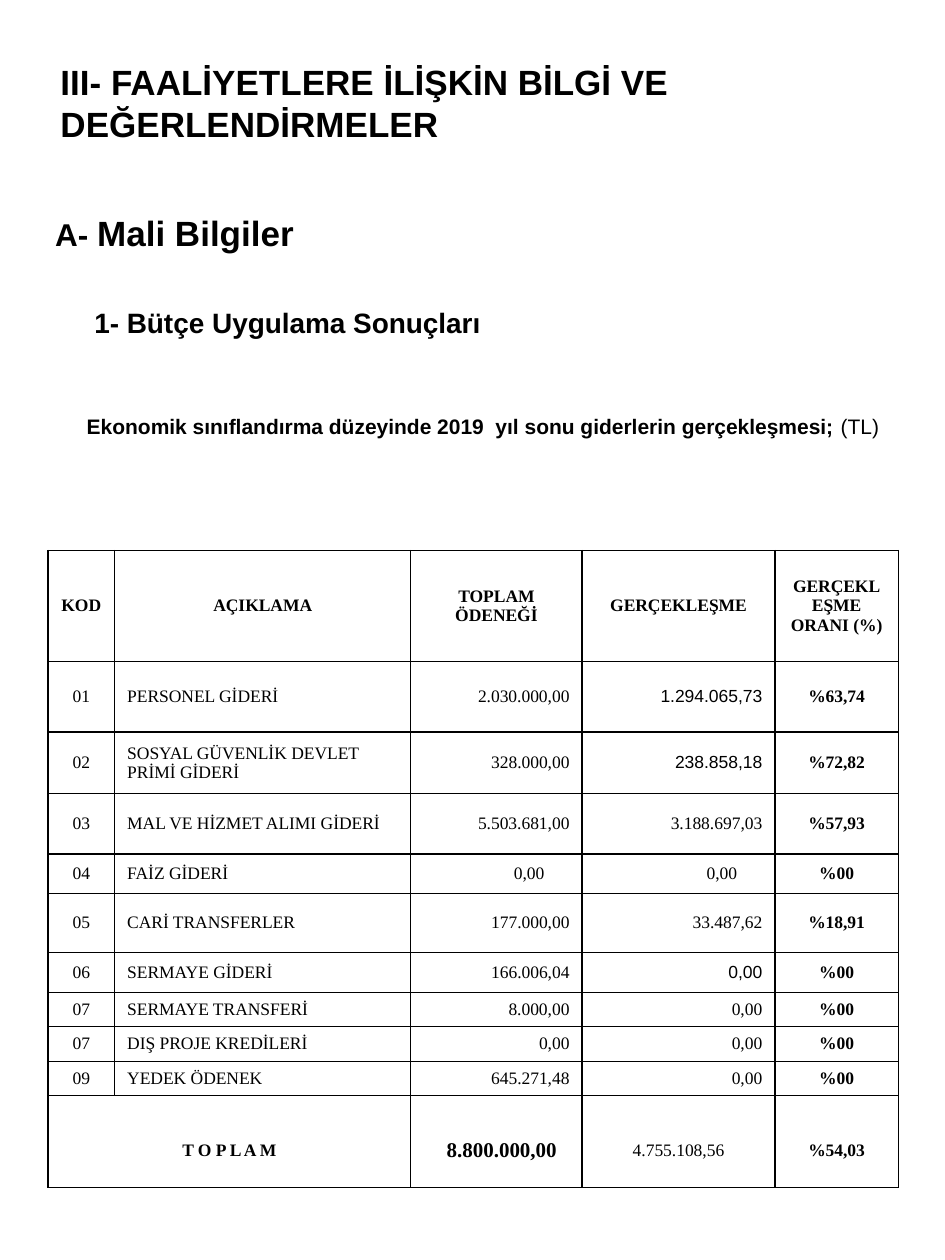
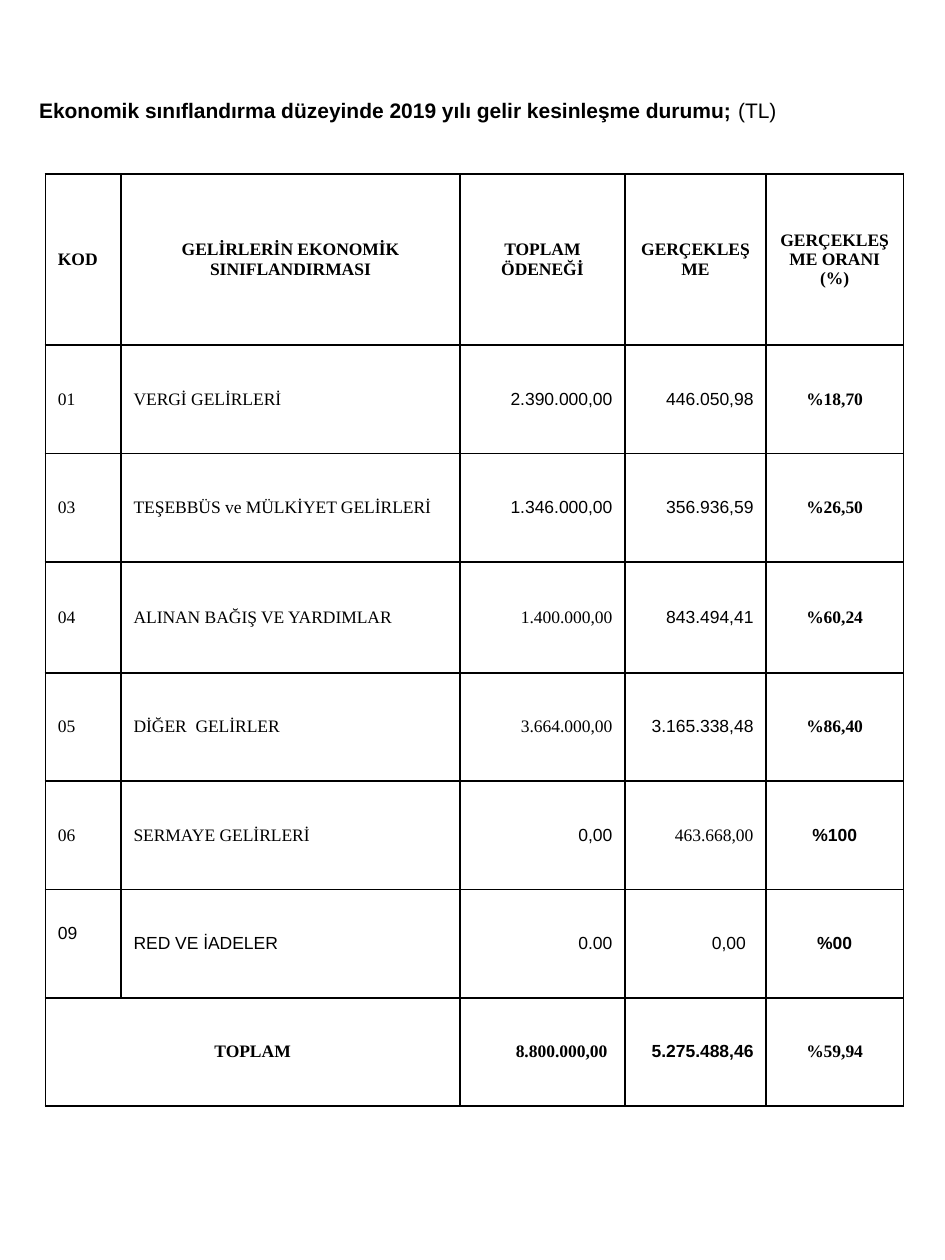
from dataclasses import dataclass, field
from typing import Any, NamedTuple

from lxml import etree
from pptx import Presentation
from pptx.dml.color import RGBColor
from pptx.enum.text import MSO_ANCHOR, MSO_AUTO_SIZE, PP_ALIGN
from pptx.oxml.ns import qn
from pptx.util import Inches, Pt

LEFT, CENTER, RIGHT = PP_ALIGN.LEFT, PP_ALIGN.CENTER, PP_ALIGN.RIGHT
MIDDLE = MSO_ANCHOR.MIDDLE
NO_AUTOFIT = MSO_AUTO_SIZE.NONE
TITLE_ONLY_LAYOUT = 5
SLIDE_WIDTH, SLIDE_HEIGHT = Inches(7.5), Inches(10)
GRID_COLUMNS, GRID_ROWS = 75, 100


@dataclass(frozen=True)
class Theme:
    sans: str = "Arial"
    serif: str = "Times New Roman"
    ink: RGBColor = RGBColor(0, 0, 0)
    border: str = "000000"
    border_width: int = Pt(1)
    title_size: int = 20
    section_size: int = 18
    subsection_size: int = 16
    caption_size: int = 12
    table_size: int = 10


THEME = Theme()


class Frame(NamedTuple):
    """A rectangle in grid columns and rows."""
    left: float
    top: float
    width: float
    height: float


class Piece(NamedTuple):
    text: str
    size: int
    bold: bool = True
    font: str = THEME.sans


class Heading(NamedTuple):
    pieces: list[Piece]
    indent: float
    space_before: int


@dataclass(frozen=True)
class Entry:
    """A table cell that departs from the format of its column."""
    text: str
    font: str = THEME.serif
    format: dict[str, Any] = field(default_factory=dict)


class BudgetTable(NamedTuple):
    left: float
    top: float
    column_widths: list[float]
    row_heights: list[float]
    alignments: list[PP_ALIGN]
    header: list[str]
    rows: list[list[str | Entry]]
    total: list[str | Entry]


def across(columns: float) -> int:
    return round(SLIDE_WIDTH * columns / GRID_COLUMNS)


def down(rows: float) -> int:
    return round(SLIDE_HEIGHT * rows / GRID_ROWS)


def place(frame: Frame) -> tuple[int, int, int, int]:
    return across(frame.left), down(frame.top), across(frame.width), down(frame.height)


def apply(target: Any, values: dict[str, Any]) -> None:
    for name, value in values.items():
        setattr(target, name, value)


def add_pieces(paragraph: Any, pieces: list[Piece]) -> None:
    for piece in pieces:
        run = paragraph.add_run()
        run.text = piece.text
        apply(run.font, {"name": piece.font, "size": Pt(piece.size), "bold": piece.bold})
        run.font.color.rgb = THEME.ink


def add_titled_slide(presentation: Any, frame: Frame, pieces: list[Piece]) -> Any:
    slide = presentation.slides.add_slide(presentation.slide_layouts[TITLE_ONLY_LAYOUT])
    title = slide.shapes.title
    apply(title, dict(zip(("left", "top", "width", "height"), place(frame))))
    apply(title.text_frame, {"word_wrap": True, "auto_size": NO_AUTOFIT, "vertical_anchor": MIDDLE})
    paragraph = title.text_frame.paragraphs[0]
    paragraph.alignment = LEFT
    add_pieces(paragraph, pieces)
    return slide


def add_headings(slide: Any, frame: Frame, headings: list[Heading]) -> None:
    text_frame = slide.shapes.add_textbox(*place(frame)).text_frame
    text_frame.word_wrap = True
    for index, heading in enumerate(headings):
        paragraph = text_frame.add_paragraph() if index else text_frame.paragraphs[0]
        paragraph.space_before = Pt(heading.space_before)
        paragraph._p.get_or_add_pPr().set("marL", str(across(heading.indent)))
        add_pieces(paragraph, heading.pieces)


def add_borders(cell: Any) -> None:
    properties = cell._tc.get_or_add_tcPr()
    for side in ("a:lnL", "a:lnR", "a:lnT", "a:lnB"):
        line = etree.SubElement(properties, qn(side), w=str(THEME.border_width))
        fill = etree.SubElement(line, qn("a:solidFill"))
        etree.SubElement(fill, qn("a:srgbClr"), val=THEME.border)


def fill_cell(cell: Any, content: str | Entry, alignment: PP_ALIGN, bold: bool) -> None:
    entry = content if isinstance(content, Entry) else Entry(content)
    values = {"alignment": alignment, "bold": bold, "size": THEME.table_size} | entry.format
    paragraph = cell.text_frame.paragraphs[0]
    paragraph.alignment = values.pop("alignment")
    add_pieces(paragraph, [Piece(entry.text, values.pop("size"), values.pop("bold"), entry.font)])
    apply(cell, values)


def add_budget_table(slide: Any, budget: BudgetTable) -> None:
    lines = [budget.header, *budget.rows, budget.total]
    frame = Frame(budget.left, budget.top, sum(budget.column_widths), sum(budget.row_heights))
    table = slide.shapes.add_table(len(lines), len(budget.header), *place(frame)).table
    apply(table, {"first_row": False, "horz_banding": False})
    for column, width in zip(table.columns, budget.column_widths):
        column.width = across(width)
    for row, height in zip(table.rows, budget.row_heights):
        row.height = down(height)

    last_row, last_column = len(lines) - 1, len(budget.header) - 1
    for row_index, line in enumerate(lines):
        for column_index, content in enumerate(line):
            cell = table.cell(row_index, column_index)
            add_borders(cell)
            cell.fill.background()
            cell.vertical_anchor = MIDDLE
            if content:
                # The code column keeps its alignment in the header too
                is_label = row_index == 0 and column_index > 0
                alignment = CENTER if is_label else budget.alignments[column_index]
                bold = row_index in (0, last_row) or column_index == last_column
                fill_cell(cell, content, alignment, bold)
    table.cell(last_row, 0).merge(table.cell(last_row, 1))


def sans(text: str, **values: Any) -> Entry:
    return Entry(text, THEME.sans, values)


def serif(text: str, **values: Any) -> Entry:
    return Entry(text, THEME.serif, values)


def caption(text: str) -> list[Piece]:
    return [Piece(text, THEME.caption_size), Piece(" (TL)", THEME.caption_size, False)]


# Expense table
SHIFTED_ZERO = serif("0,00", margin_right=across(3))
LOWERED = {"margin_top": down(1.9)}
EXPENSES = BudgetTable(
    left=3.8, top=43.7,
    column_widths=[5.3, 23.5, 13.6, 15.3, 9.8],
    row_heights=[8.8, 5.6, 4.9, 4.8, 3.1, 4.7, 3.2, 2.5, 2.8, 2.5, 7.3],
    alignments=[CENTER, LEFT, RIGHT, RIGHT, CENTER],
    header=["KOD", "AÇIKLAMA", "TOPLAM ÖDENEĞİ", "GERÇEKLEŞME", "GERÇEKLEŞME ORANI (%)"],
    rows=[
        ["01", "PERSONEL GİDERİ", "2.030.000,00", sans("1.294.065,73"), "%63,74"],
        ["02", "SOSYAL GÜVENLİK DEVLET PRİMİ GİDERİ", "328.000,00", sans("238.858,18"), "%72,82"],
        ["03", "MAL VE HİZMET ALIMI GİDERİ", "5.503.681,00", "3.188.697,03", "%57,93"],
        ["04", "FAİZ GİDERİ", SHIFTED_ZERO, SHIFTED_ZERO, "%00"],
        ["05", "CARİ TRANSFERLER", "177.000,00", "33.487,62", "%18,91"],
        ["06", "SERMAYE GİDERİ", "166.006,04", sans("0,00"), "%00"],
        ["07", "SERMAYE TRANSFERİ", "8.000,00", "0,00", "%00"],
        ["07", "DIŞ PROJE KREDİLERİ", "0,00", "0,00", "%00"],
        ["09", "YEDEK ÖDENEK", "645.271,48", "0,00", "%00"],
    ],
    total=[
        serif("T O P L A M", **LOWERED), "",
        serif("8.800.000,00", size=THEME.caption_size, margin_right=across(2), **LOWERED),
        serif("4.755.108,56", alignment=CENTER, bold=False, **LOWERED),
        serif("%54,03", **LOWERED),
    ],
)

# Revenue table
REVENUES = BudgetTable(
    left=3.6, top=13.8,
    column_widths=[6, 26.9, 13.1, 11.2, 10.9],
    row_heights=[13.6, 8.6, 8.6, 8.8, 8.6, 8.6, 8.6, 8.6],
    alignments=[LEFT, LEFT, RIGHT, RIGHT, CENTER],
    header=["KOD", "GELİRLERİN EKONOMİK SINIFLANDIRMASI", "TOPLAM ÖDENEĞİ", "GERÇEKLEŞME",
            "GERÇEKLEŞME ORANI (%)"],
    rows=[
        ["01", "VERGİ GELİRLERİ", sans("2.390.000,00"), sans("446.050,98"), "%18,70"],
        ["03", "TEŞEBBÜS ve MÜLKİYET GELİRLERİ", sans("1.346.000,00"), sans("356.936,59"), "%26,50"],
        ["04", "ALINAN BAĞIŞ VE YARDIMLAR", "1.400.000,00", sans("843.494,41"), "%60,24"],
        ["05", "DİĞER  GELİRLER", "3.664.000,00", sans("3.165.338,48"), "%86,40"],
        ["06", "SERMAYE GELİRLERİ", sans("0,00"), "463.668,00", sans("%100")],
        [sans("09", margin_bottom=down(2.1)), sans("RED VE İADELER"), sans("0.00"),
         sans("0,00", margin_right=across(1.6)), sans("%00")],
    ],
    total=[
        serif("TOPLAM", alignment=CENTER), "",
        serif("8.800.000,00", margin_right=across(1.4)), sans("5.275.488,46"), "%59,94",
    ],
)

# Headings above the expense table
HEADINGS = [
    Heading([Piece("A- ", THEME.section_size), Piece("Mali Bilgiler", THEME.title_size)], 1.3, 0),
    Heading([Piece("1- Bütçe Uygulama Sonuçları", THEME.subsection_size)], 4.4, 30),
    Heading(caption("Ekonomik sınıflandırma düzeyinde 2019  yıl sonu giderlerin gerçekleşmesi;"), 3.8, 42),
]


def main() -> None:
    presentation = Presentation()
    apply(presentation, {"slide_width": SLIDE_WIDTH, "slide_height": SLIDE_HEIGHT})

    # Expenses
    chapter = [Piece("III- FAALİYETLERE İLİŞKİN BİLGİ VE DEĞERLENDİRMELER", THEME.title_size)]
    slide = add_titled_slide(presentation, Frame(3.8, 4, 71.2, 8.2), chapter)
    add_headings(slide, Frame(2.1, 16.3, 72.9, 20), HEADINGS)
    add_budget_table(slide, EXPENSES)

    # Revenues
    revenue_title = caption("Ekonomik sınıflandırma düzeyinde 2019 yılı gelir kesinleşme durumu;")
    slide = add_titled_slide(presentation, Frame(2.1, 6.2, 72.9, 5), revenue_title)
    add_budget_table(slide, REVENUES)

    presentation.save("out.pptx")


if __name__ == "__main__":
    main()
